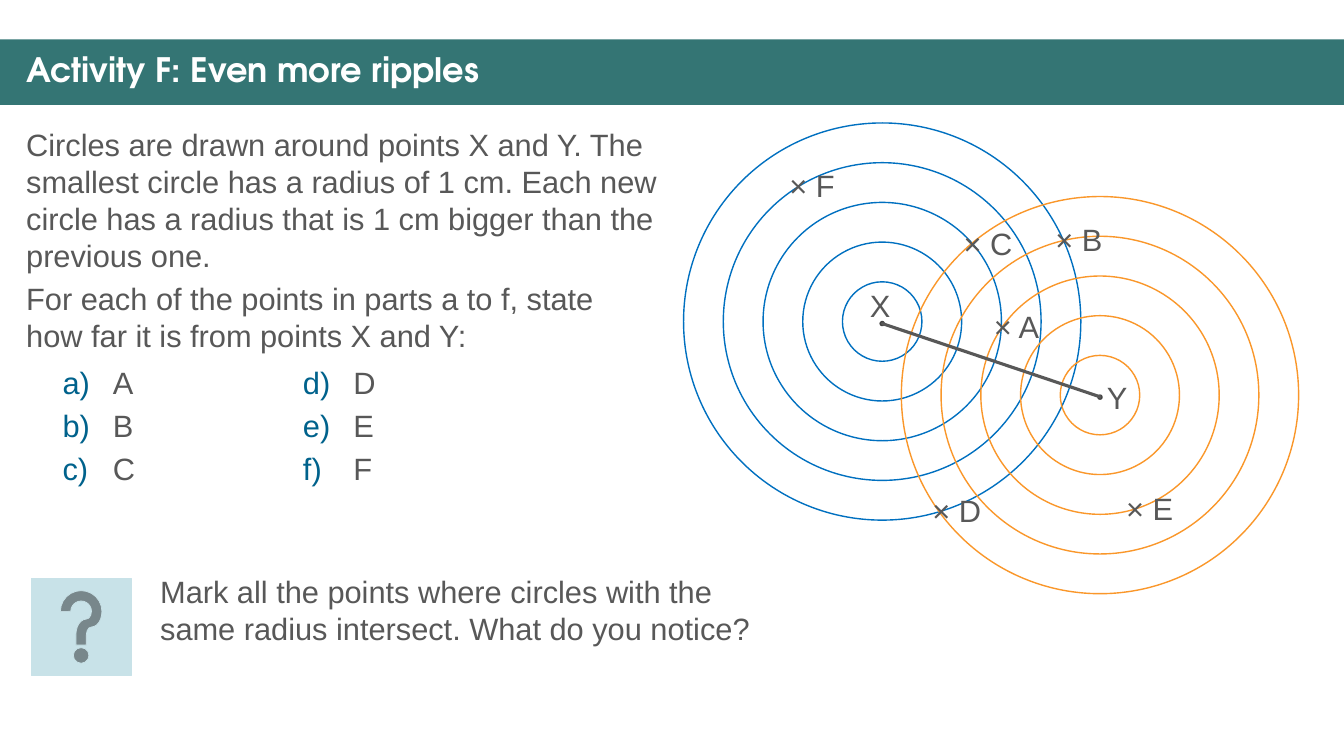
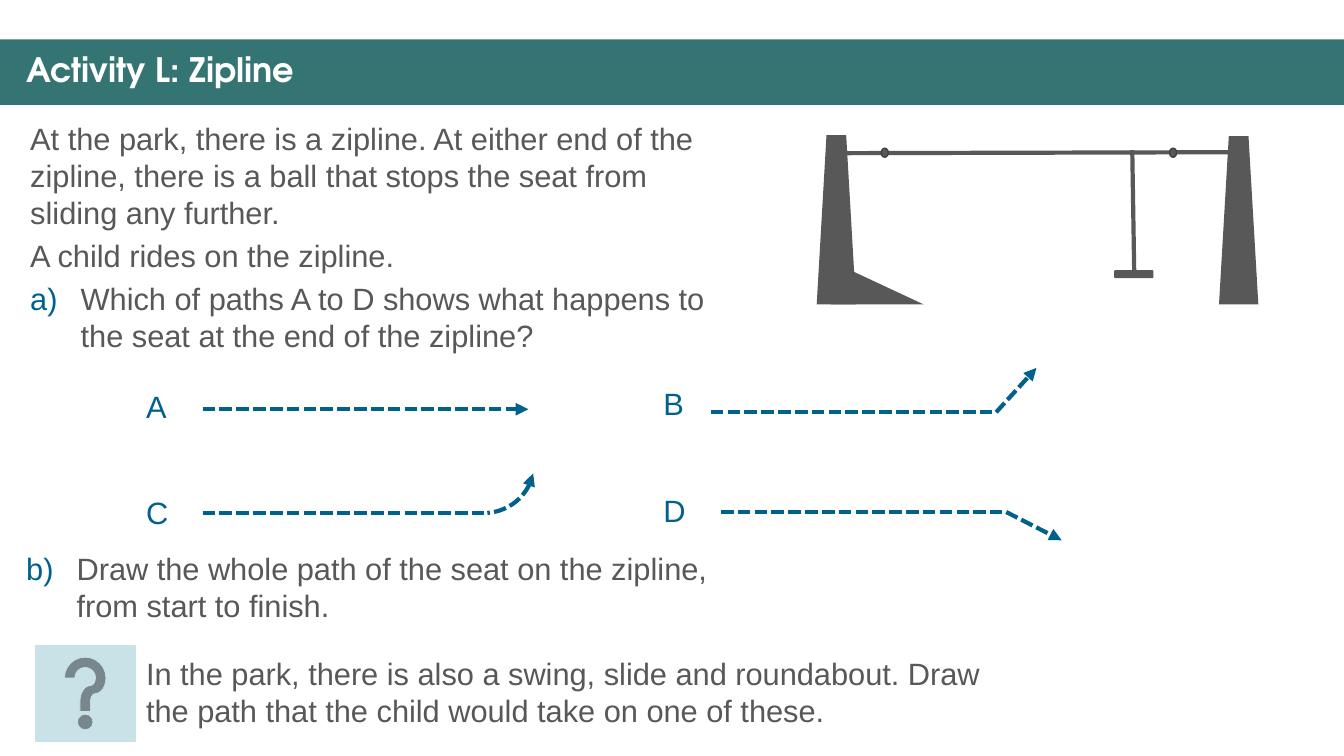
from dataclasses import dataclass

from pptx import Presentation
from pptx.dml.color import RGBColor
from pptx.enum.dml import MSO_LINE
from pptx.enum.shapes import MSO_CONNECTOR, MSO_SHAPE
from pptx.enum.text import MSO_ANCHOR, MSO_AUTO_SIZE, PP_ALIGN
from pptx.oxml import parse_xml
from pptx.oxml.ns import nsdecls, qn
from pptx.util import Inches, Pt

COLOURS = {
    "band": "347574",
    "white": "FFFFFF",
    "text": "585858",
    "accent": "00628C",
    "help": "C8E2E8",
    "blue": "0070C0",
    "orange": "FA972A",
    "outline": "414141",
}
BODY_FONT = "Arial"
TITLE_FONT = "TeX Gyre Adventor"
BODY_SIZE = 22
TITLE_SIZE = 24
LABEL_HEIGHT = 0.47
RING_COUNT = 5
OUTER_RADIUS = 1.97


@dataclass(frozen=True)
class Area:
    left: float
    top: float
    width: float
    height: float

    def lengths(self) -> list:
        return [Inches(value) for value in (self.left, self.top, self.width, self.height)]


@dataclass(frozen=True)
class Label:
    text: str
    left: float
    top: float


@dataclass(frozen=True)
class Ripple:
    name: Label
    x: float
    y: float
    colour: str


@dataclass(frozen=True)
class Stroke:
    x1: float
    y1: float
    x2: float
    y2: float
    arrow: bool = False


TITLE_AREA = Area(0.16, 0.48, 13.04, 0.47)
BAND_AREA = Area(0, 0.39, 13.33, 0.65)

RIPPLES = [
    Ripple(Label("X", 8.53, 2.8), 8.75, 3.19, "blue"),
    Ripple(Label("Y", 10.88, 3.71), 10.91, 3.92, "orange"),
]
POINTS = [
    Label("× C", 9.46, 2.18),
    Label("× D", 9.15, 4.83),
    Label("× A", 9.76, 3),
    Label("× B", 10.37, 2.14),
    Label("× E", 11.07, 4.81),
    Label("× F", 7.73, 1.61),
]
PATH_LABELS = [
    Label("A", 1.35, 3.8),
    Label("B", 6.48, 3.77),
    Label("C", 1.35, 4.85),
    Label("D", 6.48, 4.83),
]
PATH_STROKES = [
    Stroke(2.01, 4.06, 5.24, 4.06, True),
    Stroke(7.05, 4.09, 9.84, 4.09),
    Stroke(9.88, 4.09, 10.28, 3.65, True),
    Stroke(2.01, 5.09, 4.8, 5.09),
    Stroke(7.15, 5.08, 9.94, 5.08),
    Stroke(9.98, 5.08, 10.53, 5.36, True),
]
CABLE = Stroke(8.29, 1.52, 12.29, 1.51)
ROPE = Stroke(11.23, 1.49, 11.25, 2.75)
ZIPLINE_PARTS = [
    (MSO_SHAPE.RIGHT_TRIANGLE, Area(8.24, 2.59, 0.92, 0.43)),
    (MSO_SHAPE.TRAPEZOID, Area(8.1, 1.34, 0.39, 1.68)),
    (MSO_SHAPE.TRAPEZOID, Area(12.09, 1.35, 0.39, 1.67)),
    (MSO_SHAPE.ROUNDED_RECTANGLE, Area(11.05, 2.68, 0.39, 0.08)),
]
STOPPERS = [Area(left, 1.47, 0.07, 0.09) for left in (8.74, 11.6)]


def rgb(colour: str) -> RGBColor:
    return RGBColor.from_string(COLOURS[colour])


def style_runs(para, colour: str, size: float, font: str, bold: bool = False) -> None:
    for span in para.runs:
        span.font.name = font
        span.font.size = Pt(size)
        span.font.bold = bold
        span.font.color.rgb = rgb(colour)


def set_list_style(para, numbered: bool, start: int) -> None:
    properties = para._p.get_or_add_pPr()
    properties.set("marL", str(Inches(0.5) if numbered else 0))
    properties.set("indent", str(-Inches(0.5) if numbered else 0))
    if not numbered:
        properties.append(parse_xml(f"<a:buNone {nsdecls('a')}/>"))
        return
    properties.append(parse_xml(
        f'<a:buClr {nsdecls("a")}><a:srgbClr val="{COLOURS["accent"]}"/></a:buClr>'))
    properties.append(parse_xml(f'<a:buFont {nsdecls("a")} typeface="+mj-lt"/>'))
    properties.append(parse_xml(
        f'<a:buAutoNum {nsdecls("a")} type="alphaLcParenR" startAt="{start}"/>'))


def place(box, area: Area) -> None:
    box.left, box.top, box.width, box.height = area.lengths()


def fill_body(box, area: Area, plain: list[str], numbered: list[str],
              start: int = 1, columns: int = 1) -> None:
    place(box, area)
    frame = box.text_frame
    frame.text = "\n".join(plain + numbered)
    frame.auto_size = MSO_AUTO_SIZE.NONE
    frame.vertical_anchor = MSO_ANCHOR.TOP
    box.element.txBody.bodyPr.set("numCol", str(columns))
    for index, para in enumerate(frame.paragraphs):
        set_list_style(para, index >= len(plain), start)
        para.space_before = Pt(4.4 if index else 0)
        style_runs(para, "text", BODY_SIZE, BODY_FONT)


def add_text(page, text: str, area: Area, colour: str = "text", wrap: bool = True) -> None:
    box = page.shapes.add_textbox(*area.lengths())
    box.text_frame.word_wrap = wrap
    box.text_frame.text = text
    style_runs(box.text_frame.paragraphs[0], colour, BODY_SIZE, BODY_FONT)


def add_label(page, label: Label, width: float, colour: str = "text", wrap: bool = True) -> None:
    add_text(page, label.text, Area(label.left, label.top, width, LABEL_HEIGHT), colour, wrap)


def add_figure(page, kind, area: Area, fill: str = "", line: str = "", width: float = 1):
    figure = page.shapes.add_shape(kind, *area.lengths())
    figure.shadow.inherit = False
    if fill:
        figure.fill.solid()
        figure.fill.fore_color.rgb = rgb(fill)
    else:
        figure.fill.background()
    if line:
        figure.line.color.rgb = rgb(line)
        figure.line.width = Pt(width)
    else:
        figure.line.fill.background()
    return figure


def add_stroke(page, stroke: Stroke, colour: str, width: float):
    line = page.shapes.add_connector(
        MSO_CONNECTOR.STRAIGHT, Inches(stroke.x1), Inches(stroke.y1),
        Inches(stroke.x2), Inches(stroke.y2))
    line.line.color.rgb = rgb(colour)
    line.line.width = Pt(width)
    line.element.spPr.append(parse_xml(f"<a:effectLst {nsdecls('a')}/>"))
    return line


def add_dashes(figure, arrow_end: str = "") -> None:
    figure.line.dash_style = MSO_LINE.SQUARE_DOT
    if arrow_end:
        outline = figure.element.spPr.find(qn("a:ln"))
        outline.append(parse_xml(f'<a:{arrow_end} {nsdecls("a")} type="triangle"/>'))


def add_circle(page, x: float, y: float, radius: float, fill: str, line: str) -> None:
    area = Area(x - radius, y - radius, 2 * radius, 2 * radius)
    add_figure(page, MSO_SHAPE.OVAL, area, fill, line)


def add_help(page, left: float, top: float) -> None:
    add_figure(page, MSO_SHAPE.ACTION_BUTTON_HELP, Area(left, top, 0.99, 0.96),
               "help", "help", 0.5)


def add_page(deck, layout, title: str):
    page = deck.slides.add_slide(layout)
    box = page.shapes.title
    place(box, TITLE_AREA)
    frame = box.text_frame
    frame.text = title
    frame.auto_size = MSO_AUTO_SIZE.NONE
    frame.vertical_anchor = MSO_ANCHOR.MIDDLE
    para = frame.paragraphs[0]
    para.alignment = PP_ALIGN.LEFT
    para.line_spacing = 0.9
    style_runs(para, "white", TITLE_SIZE, TITLE_FONT, True)
    return page


def build_ripples(page) -> None:
    fill_body(page.placeholders[1], Area(0.16, 1.2, 6.47, 2.4), [
        "Circles are drawn around points X and Y. The smallest circle has a radius of 1 cm. "
        "Each new circle has a radius that is 1 cm bigger than the previous one.",
        "For each of the points in parts a to f, state how far it is from points X and Y:",
    ], [])
    fill_body(page.placeholders[2], Area(0.52, 3.56, 4.97, 1.36), [], list("ABCDEF"), columns=2)
    add_help(page, 0.31, 5.74)
    add_text(page, "Mark all the points where circles with the same radius intersect. "
             "What do you notice?", Area(1.49, 5.63, 6.28, 0.84))
    for ripple in RIPPLES:
        for ring in range(1, RING_COUNT + 1):
            add_circle(page, ripple.x, ripple.y, OUTER_RADIUS * ring / RING_COUNT,
                       "", ripple.colour)
        add_circle(page, ripple.x, ripple.y + 0.02, 0.02, "text", "outline")
        add_label(page, ripple.name, 0.41, wrap=False)
    add_stroke(page, Stroke(8.75, 3.21, 10.92, 3.94), "text", 2.25)
    for point in POINTS:
        add_label(page, point, 0.72)


def build_zipline(page) -> None:
    fill_body(page.placeholders[1], Area(0.2, 1.14, 7.22, 2.91), [
        "At the park, there is a zipline. At either end of the zipline, there is a ball "
        "that stops the seat from sliding any further.",
        "A child rides on the zipline.",
    ], ["Which of paths A to D shows what happens to the seat at the end of the zipline?"])
    fill_body(page.placeholders[2], Area(0.16, 5.4, 7.08, 0.84), [], [
        "Draw the whole path of the seat on the zipline, from start to finish."], start=2)
    for stroke in PATH_STROKES:
        line = add_stroke(page, stroke, "accent", 3)
        add_dashes(line, "tailEnd" if stroke.arrow else "")
    curve = add_figure(page, MSO_SHAPE.ARC, Area(4.3, 4.09, 1, 1), line="accent", width=3)
    curve.adjustments[0] = 7.46
    curve.adjustments[1] = 51.67
    add_dashes(curve, "headEnd")
    for label in PATH_LABELS:
        add_label(page, label, 0.45, "accent")
    for kind, area in ZIPLINE_PARTS:
        add_figure(page, kind, area, "text")
    for stroke in (CABLE, ROPE):
        add_stroke(page, stroke, "text", 3)
    for area in STOPPERS:
        add_figure(page, MSO_SHAPE.OVAL, area, "text", "outline")
    add_help(page, 0.35, 6.4)
    add_text(page, "In the park, there is also a swing, slide and roundabout. Draw the path "
             "that the child would take on one of these.", Area(1.35, 6.45, 8.75, 0.84))


def main() -> None:
    deck = Presentation()
    deck.slide_width = Inches(13.33)
    deck.slide_height = Inches(7.5)
    layout = deck.slide_layouts.get_by_name("Two Content")
    ripples = add_page(deck, layout, "Activity F: Even more ripples")
    zipline = add_page(deck, layout, "Activity L: Zipline")
    band = add_figure(ripples, MSO_SHAPE.RECTANGLE, BAND_AREA, "band")
    layout.shapes.element.insert(2, band.element)
    build_ripples(ripples)
    build_zipline(zipline)
    deck.save("out.pptx")


if __name__ == "__main__":
    main()
